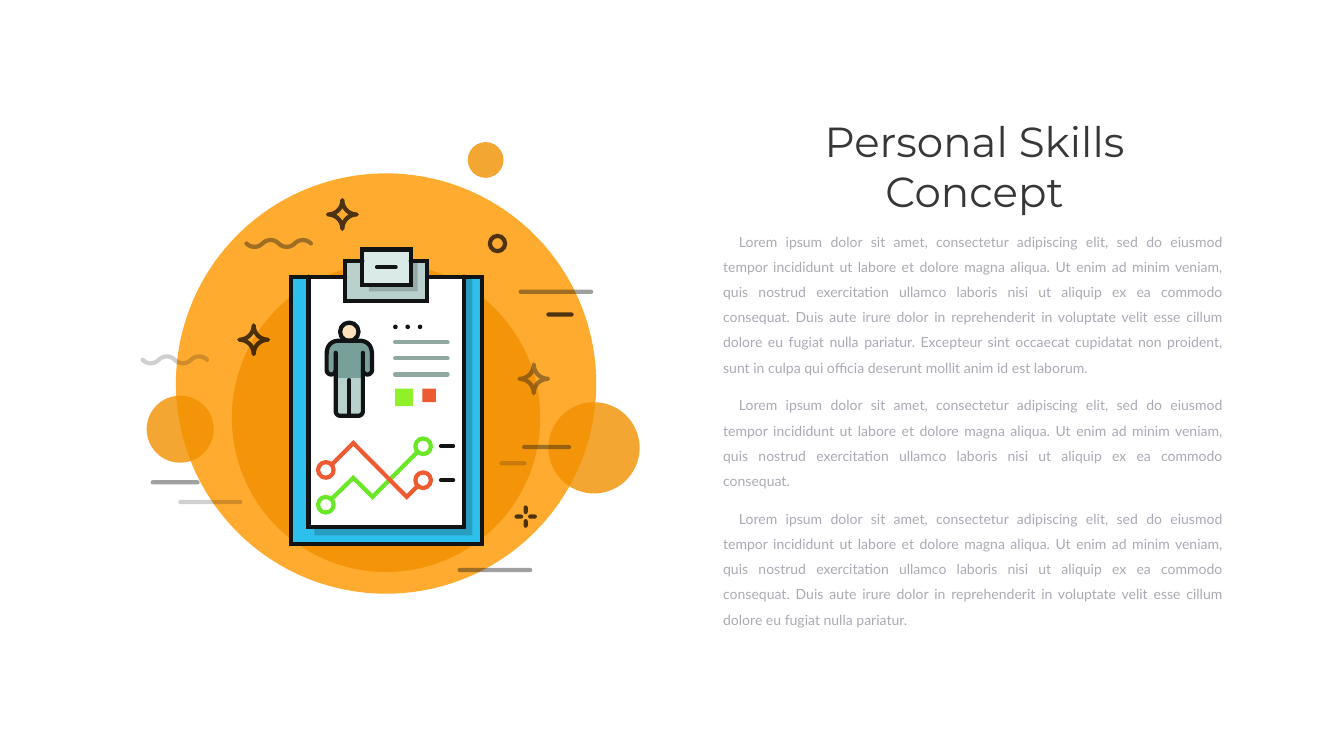
from lxml.etree import SubElement
from pptx import Presentation
from pptx.dml.color import RGBColor
from pptx.enum.shapes import MSO_CONNECTOR, MSO_SHAPE
from pptx.enum.text import MSO_AUTO_SIZE, PP_ALIGN
from pptx.oxml.ns import qn
from pptx.util import Pt

INK, DARK, BLACK = "111315", "111415", "000000"
ORANGE, GREEN, RED = "F29000", "6AE828", "EE5B33"
PALE, MIST, TEAL, GREY = "B8D1CD", "DAEAE7", "789F9A", "91A8A2"

OPENING = (
    "Lorem ipsum dolor sit amet, consectetur adipiscing elit, sed do eiusmod tempor "
    "incididunt ut labore et dolore magna aliqua. Ut enim ad minim veniam, quis nostrud "
    "exercitation ullamco laboris nisi ut aliquip ex ea commodo consequat."
)
MIDDLE = (
    " Duis aute irure dolor in reprehenderit in voluptate velit esse cillum dolore eu "
    "fugiat nulla pariatur."
)
CLOSING = (
    " Excepteur sint occaecat cupidatat non proident, sunt in culpa qui officia deserunt "
    "mollit anim id est laborum."
)


def rgb(value):
    return RGBColor.from_string(value)


def trace(start, *segments, steps=10):
    points = [start]
    for seg in segments:
        if len(seg) == 2:
            points.append(seg)
            continue
        nodes = [points[-1], seg[:2], seg[2:4], seg[4:]]
        for i in range(1, steps + 1):
            t = i / steps
            weights = ((1 - t) ** 3, 3 * t * (1 - t) ** 2, 3 * t * t * (1 - t), t ** 3)
            points.append(tuple(sum(w * n[k] for w, n in zip(weights, nodes)) for k in (0, 1)))
    return points


class Canvas:
    weight = 6

    def __init__(self, slide):
        self.shapes = slide.shapes

    def stroke(self, s, color, join="round"):
        s.line.color.rgb = rgb(color)
        s.line.width = Pt(self.weight)
        ln = s._element.spPr.find(qn("a:ln"))
        ln.set("cap", "rnd")
        SubElement(ln, qn("a:" + join))

    def fade(self, s, alpha):
        if alpha < 100:
            for clr in s._element.spPr.iter(qn("a:srgbClr")):
                SubElement(clr, qn("a:alpha"), val=str(alpha * 1000))

    def paint(self, s, fill, line, alpha, join="round"):
        s.shadow.inherit = False
        if fill:
            s.fill.solid()
            s.fill.fore_color.rgb = rgb(fill)
        else:
            s.fill.background()
        if line:
            self.stroke(s, line, join)
        else:
            s.line.fill.background()
        self.fade(s, alpha)

    def circle(self, x, y, d, fill=None, line=None, alpha=100):
        s = self.shapes.add_shape(MSO_SHAPE.OVAL, Pt(x), Pt(y), Pt(d), Pt(d))
        self.paint(s, fill, line, alpha)

    def rect(self, x, y, w, h, fill=None, line=None, alpha=100):
        s = self.shapes.add_shape(MSO_SHAPE.RECTANGLE, Pt(x), Pt(y), Pt(w), Pt(h))
        self.paint(s, fill, line, alpha, "miter")

    def outline(self, points, fill=None, line=None, alpha=100, close=False, join="round"):
        emu = [(Pt(x), Pt(y)) for x, y in points]
        builder = self.shapes.build_freeform(*emu[0])
        builder.add_line_segments(emu[1:], close=close)
        self.paint(builder.convert_to_shape(), fill, line, alpha, join)

    def line(self, x1, y1, x2, y2, color=INK, alpha=100):
        ends = [Pt(v) for v in (x1, y1, x2, y2)]
        s = self.shapes.add_connector(MSO_CONNECTOR.STRAIGHT, *ends)
        self.stroke(s, color)
        self.fade(s, alpha)
        SubElement(s._element.spPr, qn("a:effectLst"))

    def text(self, x, y, w, h, paragraphs, font, para, indent=0):
        tf = self.shapes.add_textbox(Pt(x), Pt(y), Pt(w), Pt(h)).text_frame
        tf.word_wrap = True
        tf.auto_size = MSO_AUTO_SIZE.SHAPE_TO_FIT_TEXT
        for i, content in enumerate(paragraphs):
            p = tf.add_paragraph() if i else tf.paragraphs[0]
            r = p.add_run()
            r.text = content
            for target, values in ((p, para), (r.font, font["values"])):
                for name, value in values.items():
                    setattr(target, name, value)
            r.font.color.rgb = rgb(font["color"])
            if indent:
                p._p.get_or_add_pPr().set("indent", str(Pt(indent)))

    def wave(self, x, y, alpha, step=23, rise=6.5):
        segments = []
        for i in range(4):
            left = x + i * step
            bend = y + (rise if i % 2 == 0 else -rise)
            segments.append((left + rise, bend, left + step - rise, bend, left + step, y))
        self.outline(trace((x, y), *segments), line=DARK, alpha=alpha)

    def star(self, cx, cy, color, alpha, r=20.6, k=11.5):
        tips = [(0, 1), (-1, 0), (0, -1), (1, 0), (0, 1)]
        segments = []
        for (ax, ay), (bx, by) in zip(tips, tips[1:]):
            inner = r - k
            segments.append((cx + ax * inner, cy + ay * inner, cx + bx * inner,
                             cy + by * inner, cx + bx * r, cy + by * r))
        self.outline(trace((cx, cy + r), *segments), line=color, alpha=alpha, close=True)

    def sparkle(self, cx, cy, inner=6.5, outer=13):
        for dx, dy in ((0, -1), (-1, 0), (0, 1), (1, 0)):
            self.line(cx + dx * inner, cy + dy * inner, cx + dx * outer, cy + dy * outer,
                      BLACK, 70)


def draw_background(c):
    c.circle(251.3, 247.7, 600.5, "FFAB2F")
    for x, y, d in ((331.2, 376.6, 440.6), (783.4, 574.6, 130.3),
                    (209.5, 565.2, 95.8), (668.2, 203, 51.1)):
        c.circle(x, y, d, ORANGE, alpha=80)


def draw_ornaments(c):
    c.wave(352.1, 347.8, 40)
    c.wave(203.8, 514.1, 20)
    for x1, x2, y, color, alpha in (
        (748.8, 812.9, 638.6, DARK, 40), (218.2, 282.2, 689, DARK, 40),
        (716.4, 749.5, 661.7, DARK, 20), (783.4, 816.5, 449.3, BLACK, 70),
        (257.8, 343.4, 717.1, DARK, 20), (743.8, 844.6, 416.9, DARK, 40),
        (656.6, 757.4, 814.3, DARK, 40),
    ):
        c.line(x1, y, x2, y, color, alpha)
    c.star(762.5, 541.2, DARK, 40)
    c.star(489.1, 306.4, BLACK, 70)
    c.star(362.4, 485.3, BLACK, 70)
    c.sparkle(751, 738)
    c.circle(699.8, 337, 21.8, line=BLACK, alpha=70)


def draw_clipboard(c):
    top, left, right, bottom = 395.3, 416.2, 688, 777.6
    c.rect(left, top, right - left, bottom - top, "2DC0EC")
    c.rect(449.3, top, 225.4, 369.4, DARK, alpha=20)
    c.rect(440.6, top, 222.5, 357.1, "FFFFFF")
    c.rect(493.2, 373, 117, 57, PALE)
    c.outline([(610.2, top), (right, top), (right, bottom), (left, bottom), (left, top),
               (493.2, top)], line=INK, join="miter")
    c.rect(527, 374.4, 69.8, 41.8, DARK, alpha=20)
    clip = (517.7, 356.4, 69.1, 50.4)
    c.rect(*clip, MIST)
    c.outline([(663.1, top), (663.1, 752.4), (440.6, 752.4), (440.6, top)],
              line=INK, join="miter")
    c.rect(*clip, line=INK)
    c.outline([(586.8, 373), (610.2, 373), (610.2, 430), (493.2, 430), (493.2, 373),
               (517.7, 373)], line=INK, join="miter")
    c.line(538.6, 381.6, 565.2, 381.6)


def draw_profile(c):
    c.rect(564.5, 555.1, 25.2, 25.2, "90F12A")
    c.rect(603.4, 555.1, 19.4, 19.4, RED)
    for i in range(3):
        y = 488.9 + 23 * i
        c.line(564.5, y, 639.4, y, GREY)
        c.circle(561.6 + 17.6 * i, 463.7, 6.5, INK)


def draw_trends(c):
    for color, points, start, end in (
        (GREEN, [(473.8, 712.8), (504.7, 682.6), (532.1, 709.9), (596.9, 645.1)], 709.9, 626.4),
        (RED, [(473.8, 663.8), (504.7, 632.9), (581, 709.9), (596.9, 694.1)], 660.2, 674.9),
    ):
        c.outline(points, line=color, join="miter")
        c.circle(593.3, end, 22.3, line=color)
        c.circle(454.3, start, 22.3, line=color)
        c.line(630, end + 11, 647.3, end + 11)


def draw_person(c, cx=499):
    def arm(side):
        shoulder, outer, mid, inner = (cx + side * d for d in (14.4, 32.4, 25.9, 19.4))
        return trace((cx, 486.7), (shoulder, 486.7),
                     (cx + side * 26.6, 486.7, outer, 494.6, outer, 506.2), (outer, 528.5),
                     (outer, 532.1, cx + side * 29.5, 535, mid, 535),
                     (cx + side * 22.3, 535, inner, 532.1, inner, 528.5))

    def legs(top):
        l, r = cx - 19.4, cx + 19.4
        return trace((l, top), (l, 587.5), (l, 591.1, l + 2.9, 594, l + 6.5, 594),
                     (r - 6.5, 594), (r - 2.9, 594, r, 591.1, r, 587.5), (r, top))

    head = (cx - 13.2, 460.8, 26.4)
    c.circle(*head, "FFE2BA")
    c.outline(legs(540), PALE, close=True)
    hips = [(cx + 19.4, 540), (cx - 19.4, 540)]
    c.outline(arm(1) + hips + arm(-1)[::-1], TEAL, close=True)
    c.circle(*head, line=INK)
    c.outline(legs(504), line=INK)
    for side in (1, -1):
        c.outline(arm(side), line=INK)
    c.line(cx, 543, cx, 594)


def main():
    prs = Presentation()
    prs.slide_width, prs.slide_height = Pt(1920), Pt(1080)
    c = Canvas(prs.slides.add_slide(prs.slide_layouts[6]))
    draw_background(c)
    body = {"values": {"size": Pt(20), "name": "Lato"}, "color": "AAAAB5"}
    title = {"values": {"size": Pt(60), "name": "Montserrat"}, "color": "373737"}
    c.text(1026, 317.5, 728, 552, [OPENING + MIDDLE + CLOSING, OPENING, OPENING + MIDDLE], body,
           {"alignment": PP_ALIGN.JUSTIFY, "line_spacing": 1.5, "space_before": Pt(18)}, 22.5)
    for draw in (draw_ornaments, draw_clipboard, draw_profile, draw_trends, draw_person):
        draw(c)
    c.text(1080.7, 161.3, 622.8, 152.6, ["Personal Skills Concept"], title,
           {"alignment": PP_ALIGN.CENTER})
    prs.save("out.pptx")


if __name__ == "__main__":
    main()
